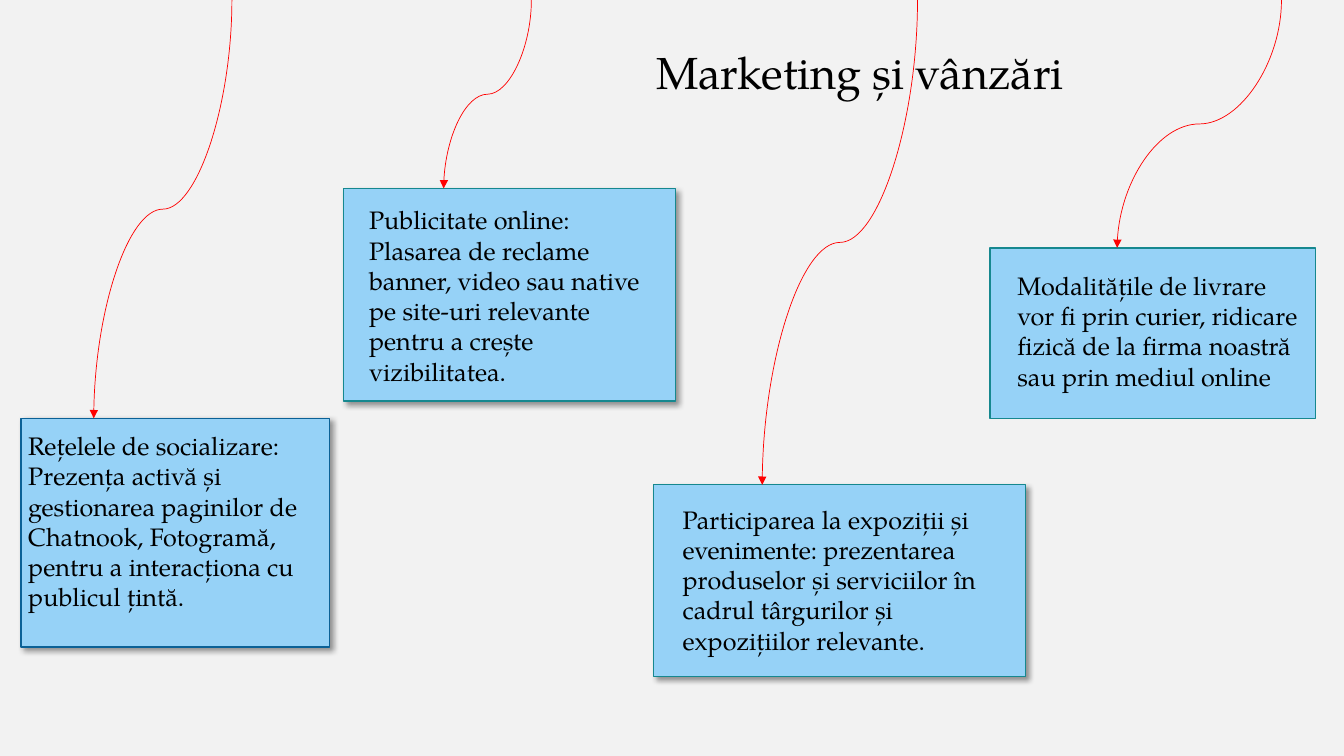
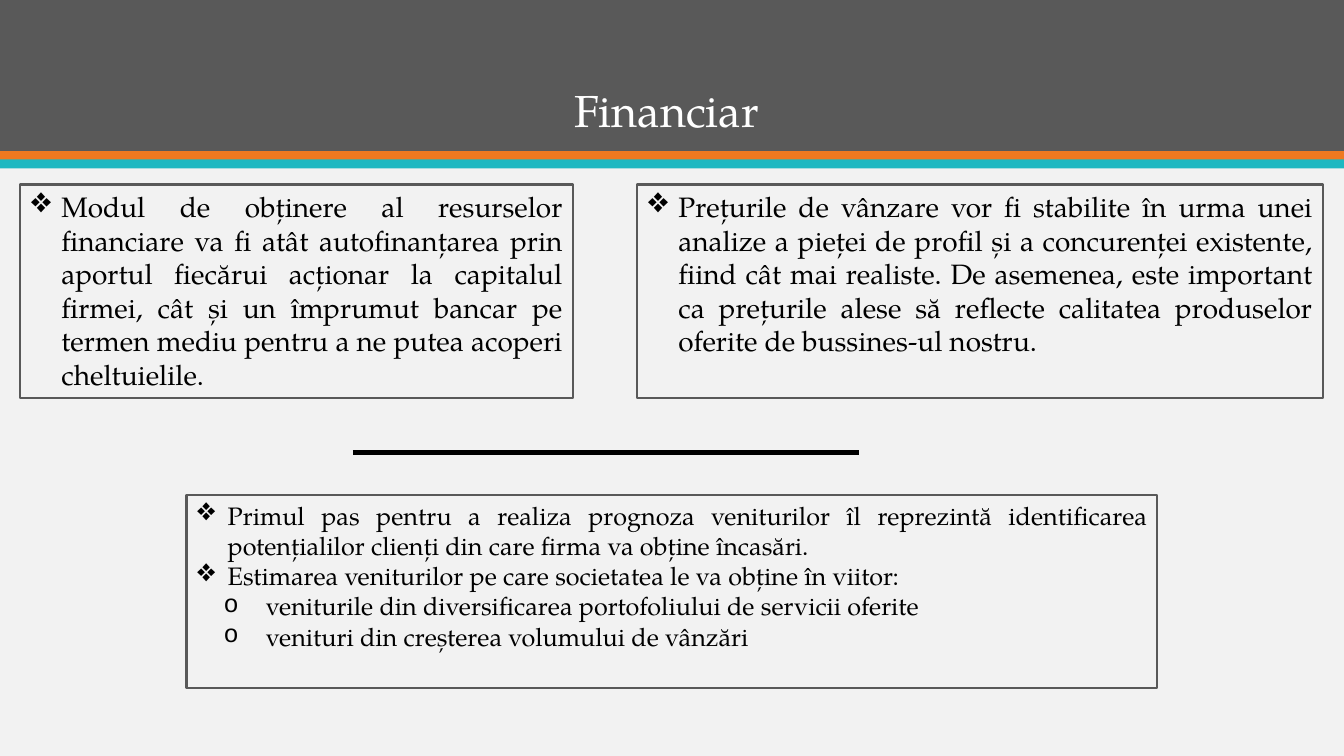
from dataclasses import dataclass

from lxml.etree import SubElement
from pptx import Presentation
from pptx.dml.color import RGBColor
from pptx.enum.shapes import MSO_CONNECTOR as Connector, MSO_SHAPE as Preset
from pptx.enum.text import MSO_ANCHOR as Anchor, PP_ALIGN as Align
from pptx.oxml.ns import qn
from pptx.util import Inches, Pt

FONT = "TeX Gyre Pagella"
WIDTH, HEIGHT = 13.33, 7.5
COLORS = {
    "background": "F2F2F2",
    "card": "96D2F7",
    "blue": "0B6196",
    "teal": "16888F",
    "arrow": "FF0000",
    "gray": "595959",
    "orange": "EF7920",
    "turquoise": "1EB8C1",
    "black": "000000",
    "white": "FFFFFF",
}


@dataclass(frozen=True)
class Box:
    left: float
    top: float
    width: float
    height: float

    def lengths(self) -> list:
        return [Inches(v) for v in (self.left, self.top, self.width, self.height)]


@dataclass(frozen=True)
class Card:
    box: Box
    margins: tuple[float, float, float]
    text: str
    arrow_start: float
    arrow_end: float
    border: str = "teal"
    shadow: bool = True


@dataclass(frozen=True)
class BulletStyle:
    symbol: str
    font: str
    margin: float
    indent: float
    level: int = 0


@dataclass(frozen=True)
class Panel:
    box: Box
    size: int
    items: list[tuple[BulletStyle, str]]


DIAMOND = BulletStyle("❖", FONT, 0.31, -0.31)
CIRCLE = BulletStyle("o", "Courier New", 0.69, -0.42, 1)

CARDS = [
    Card(Box(0.21, 4.15, 3.06, 2.27), (0.07, 0.12, 0.29),
         "Rețelele de socializare: Prezența activă și gestionarea paginilor de "
         "Chatnook, Fotogramă, pentru a interacționa cu publicul țintă.",
         2.3, 0.93, border="blue"),
    Card(Box(3.41, 1.87, 3.29, 2.11), (0.25, 0.16, 0.24),
         "Publicitate online: Plasarea de reclame banner, video sau native "
         "pe site-uri relevante pentru a crește vizibilitatea.",
         5.27, 4.4),
    Card(Box(6.48, 4.81, 3.69, 1.9), (0.29, 0.19, 0.29),
         "Participarea la expoziții și evenimente: prezentarea produselor și "
         "serviciilor în cadrul târgurilor și expozițiilor relevante.",
         9.1, 7.56),
    Card(Box(9.82, 2.46, 3.23, 1.69), (0.27, 0.22, 0.1),
         "Modalitățile de livrare vor fi prin curier, ridicare fizică de la "
         "firma noastră sau prin mediul online",
         12.71, 11.08, shadow=False),
]

BANDS = [
    (Box(0, 0, WIDTH, 1.5), "gray"),
    (Box(0, 1.5, WIDTH, 0.09), "orange"),
    (Box(0, 1.58, WIDTH, 0.09), "turquoise"),
]

PANELS = [
    Panel(Box(0.2, 1.83, 5.48, 2.12), 20, [
        (DIAMOND, "Modul de obținere al resurselor financiare va fi atât autofinanțarea "
                  "prin aportul fiecărui acționar la capitalul firmei, cât și un împrumut "
                  "bancar pe termen mediu pentru a ne putea acoperi cheltuielile."),
    ]),
    Panel(Box(6.32, 1.83, 6.8, 2.12), 20, [
        (DIAMOND, "Prețurile de vânzare vor fi stabilite în urma unei analize a pieței "
                  "de profil și a concurenței existente, fiind cât mai realiste. De "
                  "asemenea, este important ca prețurile alese să reflecte calitatea "
                  "produselor oferite de bussines-ul nostru."),
    ]),
    Panel(Box(1.85, 4.91, 9.63, 1.92), 18, [
        (DIAMOND, "Primul pas pentru a realiza prognoza veniturilor îl reprezintă "
                  "identificarea potențialilor clienți din care firma va obține încasări."),
        (DIAMOND, "Estimarea veniturilor pe care societatea le va obține în viitor:"),
        (CIRCLE, "veniturile din diversificarea portofoliului de servicii oferite"),
        (CIRCLE, "venituri din creșterea volumului de vânzări"),
    ]),
]


def rgb(name: str) -> RGBColor:
    return RGBColor.from_string(COLORS[name])


def format_runs(paragraph, size: int, color: str = "black") -> None:
    for run in paragraph.runs:
        run.font.name = FONT
        run.font.size = Pt(size)
        run.font.color.rgb = rgb(color)


def add_slide(presentation):
    slide = presentation.slides.add_slide(presentation.slide_layouts[6])
    slide.background.fill.solid()
    slide.background.fill.fore_color.rgb = rgb("background")
    return slide


def add_title(slide, text: str, box: Box, color: str) -> None:
    text_frame = slide.shapes.add_textbox(*box.lengths()).text_frame
    text_frame.word_wrap = True
    text_frame.vertical_anchor = Anchor.BOTTOM
    text_frame.text = text
    paragraph = text_frame.paragraphs[0]
    paragraph.alignment = Align.CENTER
    paragraph.line_spacing = 0.9
    format_runs(paragraph, 32, color)


def add_rectangle(slide, box: Box, fill: str | None = None,
                  border: str | None = None, border_width: float = 1):
    shape = slide.shapes.add_shape(Preset.RECTANGLE, *box.lengths())
    shape.shadow.inherit = False
    if fill:
        shape.fill.solid()
        shape.fill.fore_color.rgb = rgb(fill)
    else:
        shape.fill.background()
    if border:
        shape.line.color.rgb = rgb(border)
        shape.line.width = Pt(border_width)
    else:
        shape.line.fill.background()
    shape.text_frame.word_wrap = True
    shape.text_frame.vertical_anchor = Anchor.TOP
    return shape


def add_shadow(shape) -> None:
    effects = shape.element.spPr.find(qn("a:effectLst"))
    shadow = SubElement(effects, qn("a:outerShdw"), blurRad=str(Pt(4)), dist=str(Pt(3)),
                        dir="2700000", algn="tl", rotWithShape="0")
    color = SubElement(shadow, qn("a:srgbClr"), val=COLORS["black"])
    SubElement(color, qn("a:alpha"), val="40000")


def add_line(slide, kind, start: tuple[float, float], end: tuple[float, float],
             color: str, width: float):
    connector = slide.shapes.add_connector(kind, *(Inches(v) for v in start + end))
    connector.line.color.rgb = rgb(color)
    connector.line.width = Pt(width)
    SubElement(connector.element.spPr, qn("a:effectLst"))
    return connector


def add_curved_arrow(slide, start_x: float, end_x: float, end_y: float) -> None:
    center_x, center_y = (start_x + end_x) / 2, end_y / 2
    half_length, half_spread = end_y / 2, (start_x - end_x) / 2
    connector = add_line(slide, Connector.CURVE,
                         (center_x - half_length, center_y - half_spread),
                         (center_x + half_length, center_y + half_spread), "arrow", 0.5)
    properties = connector.element.spPr
    properties.find(qn("a:xfrm")).set("rot", "5400000")
    SubElement(properties.find(qn("a:ln")), qn("a:tailEnd"), type="triangle")


def add_card(slide, card: Card) -> None:
    shape = add_rectangle(slide, card.box, "card", card.border)
    if card.shadow:
        add_shadow(shape)
    text_frame = shape.text_frame
    left, top, right = card.margins
    text_frame.margin_left = Inches(left)
    text_frame.margin_top = Inches(top)
    text_frame.margin_right = Inches(right)
    text_frame.text = card.text
    paragraph = text_frame.paragraphs[0]
    paragraph.alignment = Align.LEFT
    format_runs(paragraph, 18)


def set_bullet(paragraph, style: BulletStyle) -> None:
    paragraph.level = style.level
    properties = paragraph._p.get_or_add_pPr()
    properties.set("marL", str(Inches(style.margin)))
    properties.set("indent", str(Inches(style.indent)))
    SubElement(properties, qn("a:buFont"), typeface=style.font)
    SubElement(properties, qn("a:buChar"), char=style.symbol)


def add_panel(slide, panel: Panel) -> None:
    text_frame = add_rectangle(slide, panel.box, border="gray", border_width=1.5).text_frame
    text_frame.text = "\n".join(text for _, text in panel.items)
    for paragraph, (style, _) in zip(text_frame.paragraphs, panel.items):
        paragraph.alignment = Align.JUSTIFY
        set_bullet(paragraph, style)
        format_runs(paragraph, panel.size)


def build_marketing(presentation) -> None:
    slide = add_slide(presentation)
    add_title(slide, "Marketing și vânzări", Box(6.32, 0.27, 4.42, 0.76), "black")
    for card in CARDS:
        add_card(slide, card)
    for card in CARDS:
        add_curved_arrow(slide, card.arrow_start, card.arrow_end, card.box.top)


def build_finance(presentation) -> None:
    slide = add_slide(presentation)
    for box, color in BANDS:
        add_rectangle(slide, box, color)
    add_title(slide, "Financiar ", Box(1.42, 0.28, 10.5, 1.13), "white")
    for panel in PANELS:
        add_panel(slide, panel)
    add_line(slide, Connector.STRAIGHT, (3.5, 4.49), (8.52, 4.49), "black", 3)


def main() -> None:
    presentation = Presentation()
    presentation.slide_width = Inches(WIDTH)
    presentation.slide_height = Inches(HEIGHT)
    build_marketing(presentation)
    build_finance(presentation)
    presentation.save("out.pptx")


if __name__ == "__main__":
    main()
